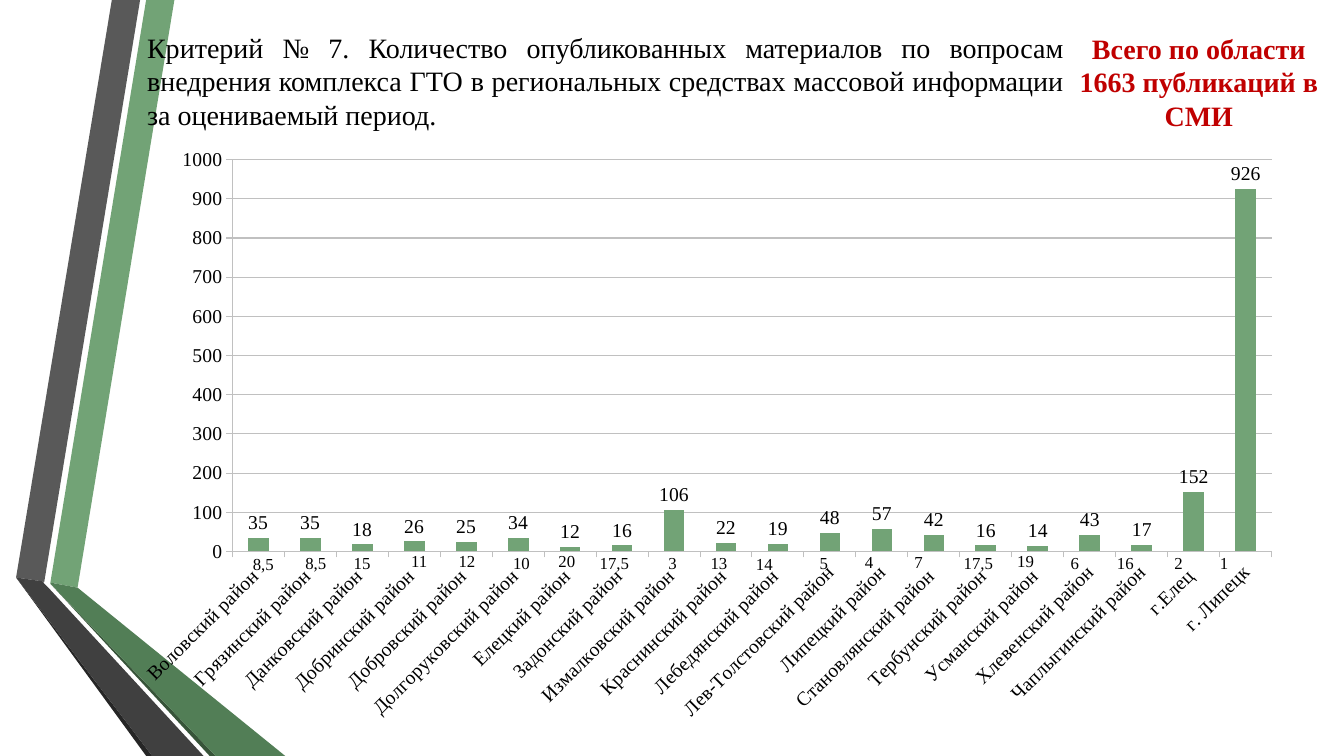
from lxml.etree import SubElement
from pptx import Presentation
from pptx.chart.data import CategoryChartData
from pptx.dml.color import RGBColor
from pptx.enum.chart import XL_CHART_TYPE, XL_LABEL_POSITION, XL_TICK_MARK
from pptx.enum.text import PP_ALIGN
from pptx.oxml.ns import qn
from pptx.util import Inches, Pt

THEME = {
    "font": "Times New Roman",
    "ink": RGBColor.from_string("000000"),
    "accent": RGBColor.from_string("C00000"),
    "bar": RGBColor.from_string("72A376"),
    "grid": RGBColor.from_string("C0C0C0"),
    "title": Pt(20),
    "chart": Pt(14),
    "rank": Pt(12),
}
COLUMNS, ROWS = 1333, 750
CELL = Inches(0.01)


def style(font, size, color=THEME["ink"], bold=False):
    font.name = THEME["font"]
    font.size = size
    font.color.rgb = color
    font.bold = bold


def write(text, area, size, align=PP_ALIGN.LEFT, **look):
    frame = slide.shapes.add_textbox(*(n * CELL for n in area)).text_frame
    frame.word_wrap = True
    paragraph = frame.paragraphs[0]
    paragraph.text = text
    paragraph.alignment = align
    style(paragraph.font, size, **look)


deck = Presentation()
deck.slide_width = COLUMNS * CELL
deck.slide_height = ROWS * CELL
slide = deck.slides.add_slide(deck.slide_layouts[6])

ribbons = [
    ("72A376", [(50, 578), (77, 583), (173, 0), (145, 0)]),
    ("595959", [(139, 0), (111, 0), (16, 573), (44, 577)]),
    ("262626", [(16, 573), (145, ROWS), (151, ROWS)]),
    ("375439", [(50, 579), (208, ROWS), (214, ROWS)]),
    ("527E56", [(50, 579), (214, ROWS), (283, ROWS), (77, 583), (50, 578)]),
    ("404040", [(202, ROWS), (48, 583), (43, 578), (44, 577), (16, 573), (151, ROWS)]),
]
for color, (start, *corners) in ribbons:
    builder = slide.shapes.build_freeform(*start, scale=CELL)
    builder.add_line_segments(corners, close=True)
    ribbon = builder.convert_to_shape()
    ribbon.shadow.inherit = False
    ribbon.fill.solid()
    ribbon.fill.fore_color.rgb = RGBColor.from_string(color)
    ribbon.line.fill.background()

districts = [
    ("Воловский район ", 35, "8,5", 241, 544),
    ("Грязинский район ", 35, "8,5", 293, 543),
    ("Данковский район ", 18, "15", 341, 543),
    ("Добринский район ", 26, "11", 398, 541),
    ("Добровский район ", 25, "12", 445, 541),
    ("Долгоруковский район ", 34, "10", 499, 543),
    ("Елецкий район ", 12, "20", 544, 541),
    ("Задонский район ", 16, "17,5", 585, 543),
    ("Измалковский район ", 106, "3", 653, 543),
    ("Краснинский район ", 22, "13", 695, 543),
    ("Лебедянский район ", 19, "14", 740, 544),
    ("Лев-Толстовский район", 48, "5", 803, 543),
    ("Липецкий район", 57, "4", 848, 542),
    ("Становлянский район ", 42, "7", 897, 542),
    ("Тербунский район ", 16, "17,5", 946, 543),
    ("Усманский район ", 14, "19", 999, 541),
    ("Хлевенский район", 43, "6", 1052, 543),
    ("Чаплыгинский район", 17, "16", 1098, 543),
    ("г.Елец ", 152, "2", 1155, 543),
    ("г. Липецк", 926, "1", 1200, 543),
]
publications = CategoryChartData(number_format="0")
publications.categories = [name for name, *_ in districts]
publications.add_series("Series 1", [count for _, count, *_ in districts])
chart = slide.shapes.add_chart(
    XL_CHART_TYPE.COLUMN_CLUSTERED,
    *(n * CELL for n in (118, 136, 1167, 590)),
    publications,
).chart
chart.has_legend = False
chart.has_title = False
style(chart.font, THEME["chart"])

bars = chart.plots[0]
plot_area = bars._element.getparent()
layout = plot_area.find(qn("c:layout"))
if layout is None:
    layout = SubElement(plot_area, qn("c:layout"))
    plot_area.insert(0, layout)
manual = SubElement(layout, qn("c:manualLayout"))
for tag, value in [
    ("layoutTarget", "inner"), ("xMode", "edge"), ("yMode", "edge"),
    ("x", "0.0963"), ("y", "0.038"), ("w", "0.8835"), ("h", "0.659"),
]:
    SubElement(manual, qn(f"c:{tag}")).set("val", value)

for axis in (chart.category_axis, chart.value_axis):
    axis.major_tick_mark = XL_TICK_MARK.OUTSIDE
    axis.minor_tick_mark = XL_TICK_MARK.NONE
    axis.format.line.color.rgb = THEME["grid"]
    style(axis.tick_labels.font, THEME["chart"])
chart.category_axis._element.find(qn("c:txPr")).find(qn("a:bodyPr")).set("rot", "-2700000")

scale = chart.value_axis
scale.minimum_scale, scale.maximum_scale, scale.major_unit = 0, 1000, 100
scale.tick_labels.number_format = "0"
scale.tick_labels.number_format_is_linked = False
scale.has_major_gridlines = True
scale.major_gridlines.format.line.color.rgb = THEME["grid"]

bars.gap_width = 150
bars.vary_by_categories = False
bars.series[0].format.fill.solid()
bars.series[0].format.fill.fore_color.rgb = THEME["bar"]
bars.has_data_labels = True
counts = bars.data_labels
counts.show_value = True
counts.number_format = "0"
counts.number_format_is_linked = False
counts.position = XL_LABEL_POSITION.OUTSIDE_END
style(counts.font, THEME["chart"])

write(
    "Критерий № 7. Количество опубликованных материалов по вопросам внедрения "
    "комплекса ГТО в региональных средствах массовой информации за оцениваемый период.",
    (136, 25, 929, 111), THEME["title"], PP_ALIGN.JUSTIFY,
)
write(
    "Всего по области 1663 публикаций в СМИ",
    (1045, 26, 288, 111), THEME["title"], PP_ALIGN.CENTER,
    color=THEME["accent"], bold=True,
)
for *_, rank, left, top in districts:
    write(rank, (left, top, 60, 43), THEME["rank"])

deck.save("out.pptx")
